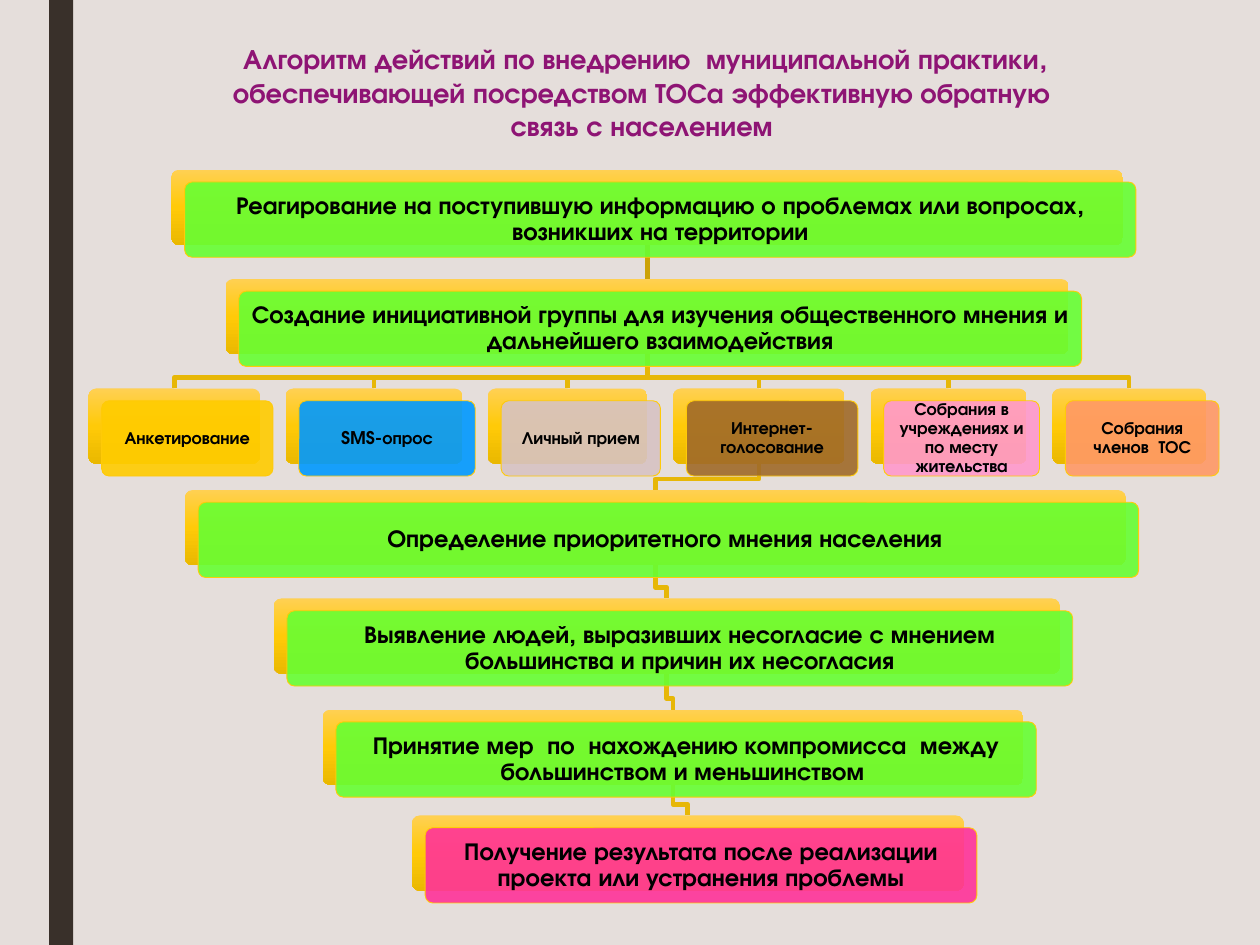
from copy import deepcopy
from dataclasses import dataclass

from lxml.etree import SubElement
from pptx import Presentation
from pptx.dml.color import RGBColor
from pptx.enum.shapes import MSO_CONNECTOR, MSO_SHAPE
from pptx.enum.text import MSO_ANCHOR, PP_ALIGN
from pptx.oxml.ns import qn
from pptx.util import Pt

FONT = "TeX Gyre Adventor"
COLOURS = {
    "background": "E5DEDB", "rail": "39302A", "title": "8E1474", "text": "000000",
    "gold_light": "FFD052", "gold": "FFCA08", "gold_dark": "EAB800",
    "elbow": "E7B707", "trunk": "CCA206",
    "green": "66FF33", "pink": "FF3399", "yellow": "FFCC00", "blue": "0099FF",
    "beige": "D7C3C3", "brown": "A06A29", "rose": "FF99CC", "orange": "FF9966",
}
CARD_HEIGHT = 43
FRONT_SHIFT = (7.5, 7)
BEND_ABOVE_CHILD = 6.3
LINE_WIDTH = 2.75


@dataclass
class Card:
    left: float
    top: float
    width: float
    colour: str
    text: str
    size: int = 14
    inset: float = 4.2

    @property
    def middle(self) -> float:
        return self.left + self.width / 2

    @property
    def bottom(self) -> float:
        return self.top + CARD_HEIGHT


STEPS = [
    Card(98, 97, 543.6, "green",
         "Реагирование на поступившую информацию о проблемах или вопросах, "
         "возникших на территории"),
    Card(129, 159.4, 481.6, "green",
         "Создание инициативной группы для изучения общественного мнения и "
         "дальнейшего взаимодействия"),
    Card(105.8, 280, 537.4, "green", "Определение приоритетного мнения населения "),
    Card(156.5, 342, 449, "green",
         "Выявление людей, выразивших несогласие с мнением большинства "
         "и причин их несогласия"),
    Card(184.5, 405.5, 400.2, "green",
         "Принятие мер  по  нахождению компромисса  между большинством и меньшинством "),
    Card(235.5, 466, 315.2, "pink",
         "Получение результата после реализации проекта или устранения проблемы"),
]
METHODS_LEFT, METHODS_TOP, METHODS_GAP = 50.6, 222, 14.8
METHODS = [
    (97.9, "yellow", "Анкетирование"),
    (100.8, "blue", "SMS-опрос"),
    (91, "beige", "Личный прием"),
    (98, "brown", "Интернет-голосование"),
    (89, "rose", "Собрания в учреждениях и по месту жительства"),
    (87.8, "orange", "Собрания членов  ТОС"),
]


def rgb(name: str) -> RGBColor:
    return RGBColor.from_string(COLOURS[name])


def method_cards() -> list[Card]:
    cards, left = [], METHODS_LEFT
    for width, colour, text in METHODS:
        cards.append(Card(left, METHODS_TOP, width, colour, text, size=10, inset=3))
        left += width + METHODS_GAP
    return cards


def write_text(frame, *paragraphs: str, size: int, colour: str = "text",
               line_spacing: float = 1.0) -> None:
    frame.word_wrap = True
    for index, text in enumerate(paragraphs):
        paragraph = frame.add_paragraph() if index else frame.paragraphs[0]
        paragraph.alignment = PP_ALIGN.CENTER
        paragraph.line_spacing = line_spacing
        run = paragraph.add_run()
        run.text = text
        run.font.name = FONT
        run.font.size = Pt(size)
        run.font.bold = True
        run.font.color.rgb = rgb(colour)


def fill_gold(shape) -> None:
    """Fill with a three-stop gold gradient running downwards."""
    shape.fill.gradient()
    shape.fill.gradient_angle = 270
    stop_list = shape._element.spPr.find(".//" + qn("a:gsLst"))
    stop_list.insert(1, deepcopy(stop_list[0]))
    golds = (("gold_light", 0), ("gold", 0.5), ("gold_dark", 1))
    for stop, (colour, position) in zip(shape.fill.gradient_stops, golds):
        stop.color.rgb = rgb(colour)
        stop.position = position


def add_plate(slide, left: float, top: float, width: float):
    shape = slide.shapes.add_shape(
        MSO_SHAPE.ROUNDED_RECTANGLE, Pt(left), Pt(top), Pt(width), Pt(CARD_HEIGHT))
    shape.adjustments[0] = 0.1
    shape.shadow.inherit = False
    return shape


def add_card(slide, card: Card):
    """Draw a gold plate with the coloured plate over it; return the gold one."""
    back = add_plate(slide, card.left, card.top, card.width)
    fill_gold(back)
    back.line.fill.background()

    shift_x, shift_y = FRONT_SHIFT
    front = add_plate(slide, card.left + shift_x, card.top + shift_y, card.width)
    front.fill.solid()
    front.fill.fore_color.rgb = rgb(card.colour)
    colour_element = front._element.spPr.find(qn("a:solidFill"))[0]
    SubElement(colour_element, qn("a:alpha"), val="90000")
    front.line.color.rgb = rgb("gold")
    front.line.width = Pt(0.5)

    frame = front.text_frame
    frame.vertical_anchor = MSO_ANCHOR.MIDDLE
    frame.margin_left = frame.margin_right = Pt(card.inset)
    frame.margin_top = frame.margin_bottom = Pt(card.inset)
    write_text(frame, card.text, size=card.size, line_spacing=0.9)
    return back


def add_elbow(slide, parent: Card, child: Card) -> None:
    bend = child.top - BEND_ABOVE_CHILD
    builder = slide.shapes.build_freeform(Pt(parent.middle), Pt(parent.bottom))
    corners = [(parent.middle, bend), (child.middle, bend), (child.middle, child.top)]
    builder.add_line_segments([(Pt(x), Pt(y)) for x, y in corners], close=False)
    elbow = builder.convert_to_shape()
    elbow.shadow.inherit = False
    elbow.fill.background()
    elbow.line.color.rgb = rgb("elbow")
    elbow.line.width = Pt(LINE_WIDTH)


def add_trunk(slide, parent: Card, child: Card):
    trunk = slide.shapes.add_connector(
        MSO_CONNECTOR.STRAIGHT, Pt(parent.middle), Pt(parent.bottom),
        Pt(child.middle), Pt(child.top))
    trunk.line.color.rgb = rgb("trunk")
    trunk.line.width = Pt(LINE_WIDTH)
    SubElement(trunk._element.spPr, qn("a:effectLst"))
    return trunk


def main() -> None:
    presentation = Presentation()
    presentation.slide_width, presentation.slide_height = Pt(720), Pt(540)
    slide = presentation.slides.add_slide(presentation.slide_layouts[6])
    slide.background.fill.solid()
    slide.background.fill.fore_color.rgb = rgb("background")

    rail = slide.shapes.add_shape(MSO_SHAPE.RECTANGLE, Pt(28.1), Pt(0), Pt(13.7), Pt(540))
    rail.shadow.inherit = False
    rail.fill.solid()
    rail.fill.fore_color.rgb = rgb("rail")
    rail.line.fill.background()

    title = slide.shapes.add_textbox(Pt(66.2), Pt(20.2), Pt(605.5), Pt(65.5))
    write_text(title.text_frame,
               "Алгоритм действий по внедрению  муниципальной практики, "
               "обеспечивающей посредством ТОСа эффективную обратную ",
               "связь с населением ", size=16, colour="title")

    methods = method_cards()
    reaction, group, *follow_up = STEPS
    voting = methods[3]
    for method in methods:
        add_elbow(slide, group, method)
    for parent, child in zip([voting, *follow_up], follow_up):
        add_elbow(slide, parent, child)
    trunk = add_trunk(slide, reaction, group)

    # The lines lie behind the cards, so the trunk is joined once the cards exist.
    plates = [add_card(slide, card) for card in STEPS + methods]
    trunk.begin_connect(plates[0], 2)
    trunk.end_connect(plates[1], 0)

    presentation.save("out.pptx")


if __name__ == "__main__":
    main()
